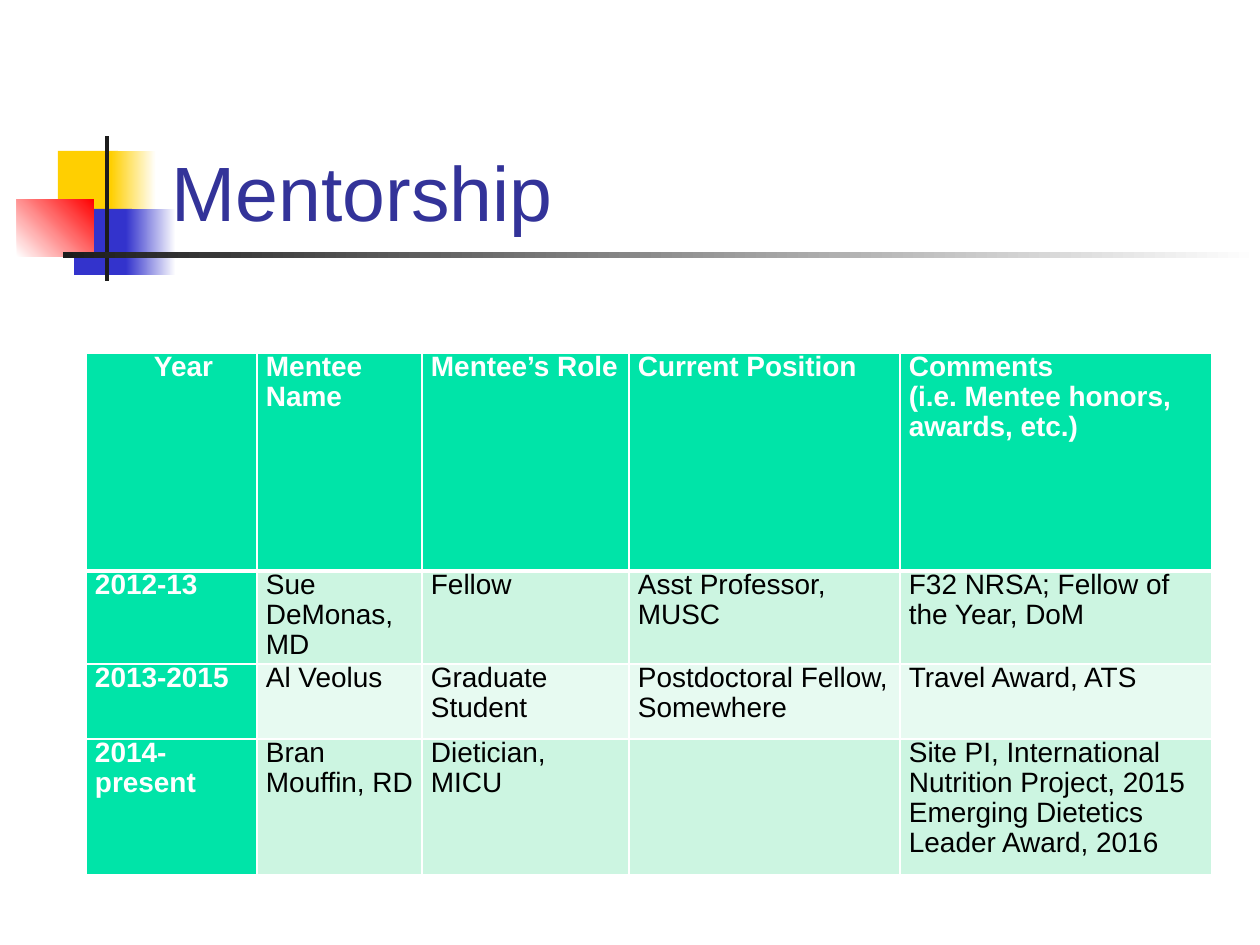
"""Build the Mentorship slide with its banner blocks and mentee table."""
from lxml.etree import fromstring
from pptx import Presentation
from pptx.dml.color import RGBColor
from pptx.enum.shapes import MSO_SHAPE
from pptx.enum.text import MSO_ANCHOR, PP_ALIGN
from pptx.oxml.ns import nsdecls
from pptx.util import Emu, Pt

COLORS = {
    "yellow": "FFCF01", "blue": "3333CC", "red": "FF0000", "dark": "1C1C1C",
    "white": "FFFFFF", "black": "000000", "title": "333399",
    "header": "00E4A8", "band": "CCF5E1", "light": "E7FAF1",
}

BLOCKS = [
    ((58, 151, 60, 66), "yellow", None, 0),
    ((111, 151, 45, 66), "yellow", "white", 0),
    ((74, 209, 58, 66), "blue", None, 0),
    ((126, 209, 50, 66), "blue", "white", 0),
    ((17, 199, 77, 58), "white", "red", 45),
    ((105, 136, 4, 145), "dark", None, 0),
    ((63, 252, 1197, 6), "dark", "white", 0),
]

COLUMNS = [171, 165, 207, 271, 312]
ROW_HEIGHTS = [218, 93, 75, 136]
ROWS = [
    ["Year", "Mentee Name", "Mentee’s Role", "Current Position",
     "Comments\v(i.e. Mentee honors, awards, etc.)"],
    ["2012-13", "Sue DeMonas, MD", "Fellow", "Asst Professor, MUSC",
     "F32 NRSA; Fellow of the Year, DoM"],
    ["2013-2015", "Al Veolus", "Graduate Student",
     "Postdoctoral Fellow, Somewhere", "Travel Award, ATS"],
    ["2014-present", "Bran Mouffin, RD", "Dietician, MICU", "",
     "Site PI, International Nutrition Project, 2015\n"
     "Emerging Dietetics Leader Award, 2016"],
]


def px(n):
    return Emu(round(n * 914400 / 126))


def rgb(name):
    return RGBColor.from_string(COLORS[name])


def assign(obj, values):
    for name, value in values.items():
        setattr(obj, name, value)


class Deck:
    """Hold the style and the current slide."""

    font = "Arial"
    cell_format = {"margin_left": px(9), "margin_right": px(9),
                   "margin_top": 0, "margin_bottom": 0}

    def __init__(self, prs):
        self.s = prs.slides.add_slide(prs.slide_layouts[5])

    def style(self, p, size, color, bold=False):
        assign(p.font, {"name": self.font, "size": Pt(size), "bold": bold})
        p.font.color.rgb = rgb(color)

    def title(self, text, box):
        sp = self.s.shapes.title
        assign(sp, dict(zip(("left", "top", "width", "height"), map(px, box))))
        tf = sp.text_frame
        assign(tf, {"text": text, "vertical_anchor": MSO_ANCHOR.BOTTOM})
        p = tf.paragraphs[0]
        p.alignment = PP_ALIGN.LEFT
        self.style(p, 44, "title")

    def block(self, box, color, fade, angle):
        sp = self.s.shapes.add_shape(MSO_SHAPE.RECTANGLE, *map(px, box))
        sp.shadow.inherit = False
        sp.line.fill.background()
        if fade:
            sp.fill.gradient()
            sp.fill.gradient_angle = angle
            for stop, name in zip(sp.fill.gradient_stops, (color, fade)):
                stop.color.rgb = rgb(name)
        else:
            sp.fill.solid()
            sp.fill.fore_color.rgb = rgb(color)

    def borders(self, cell, row):
        widths = {"L": 1, "R": 1, "T": 3 if row == 1 else 1, "B": 3 if row == 0 else 1}
        tc_pr = cell._tc.get_or_add_tcPr()
        for i, (side, width) in enumerate(widths.items()):
            tc_pr.insert(i, fromstring(
                f'<a:ln{side} {nsdecls("a")} w="{Pt(width)}"><a:solidFill>'
                f'<a:srgbClr val="{COLORS["white"]}"/></a:solidFill></a:ln{side}>'))

    def cell(self, cell, text, row, col):
        heading = row == 0 or col == 0
        assign(cell, self.cell_format)
        cell.fill.solid()
        cell.fill.fore_color.rgb = rgb("header" if heading else "band" if row % 2 else "light")
        self.borders(cell, row)
        cell.text_frame.text = text
        for p in cell.text_frame.paragraphs:
            p.line_spacing = 0.96
            self.style(p, 16, "white" if heading else "black", heading)

    def table(self, left, top, columns, heights, rows):
        table = self.s.shapes.add_table(
            len(rows), len(columns), px(left), px(top),
            px(sum(columns)), px(sum(heights))).table
        table.first_col = True
        for column, width in zip(table.columns, columns):
            column.width = px(width)
        for i, (row, height) in enumerate(zip(rows, heights)):
            table.rows[i].height = px(height)
            for j, text in enumerate(row):
                self.cell(table.cell(i, j), text, i, j)
        year = table.cell(0, 0).text_frame.paragraphs[0]
        year._p.get_or_add_pPr().set("marL", str(px(59)))


def main():
    prs = Presentation()
    assign(prs, {"slide_width": px(1260), "slide_height": px(945)})
    deck = Deck(prs)
    for block in BLOCKS:
        deck.block(*block)
    deck.title("Mentorship", (159, 86, 1074, 157))
    deck.table(86, 353, COLUMNS, ROW_HEIGHTS, ROWS)
    prs.save("out.pptx")


if __name__ == "__main__":
    main()
